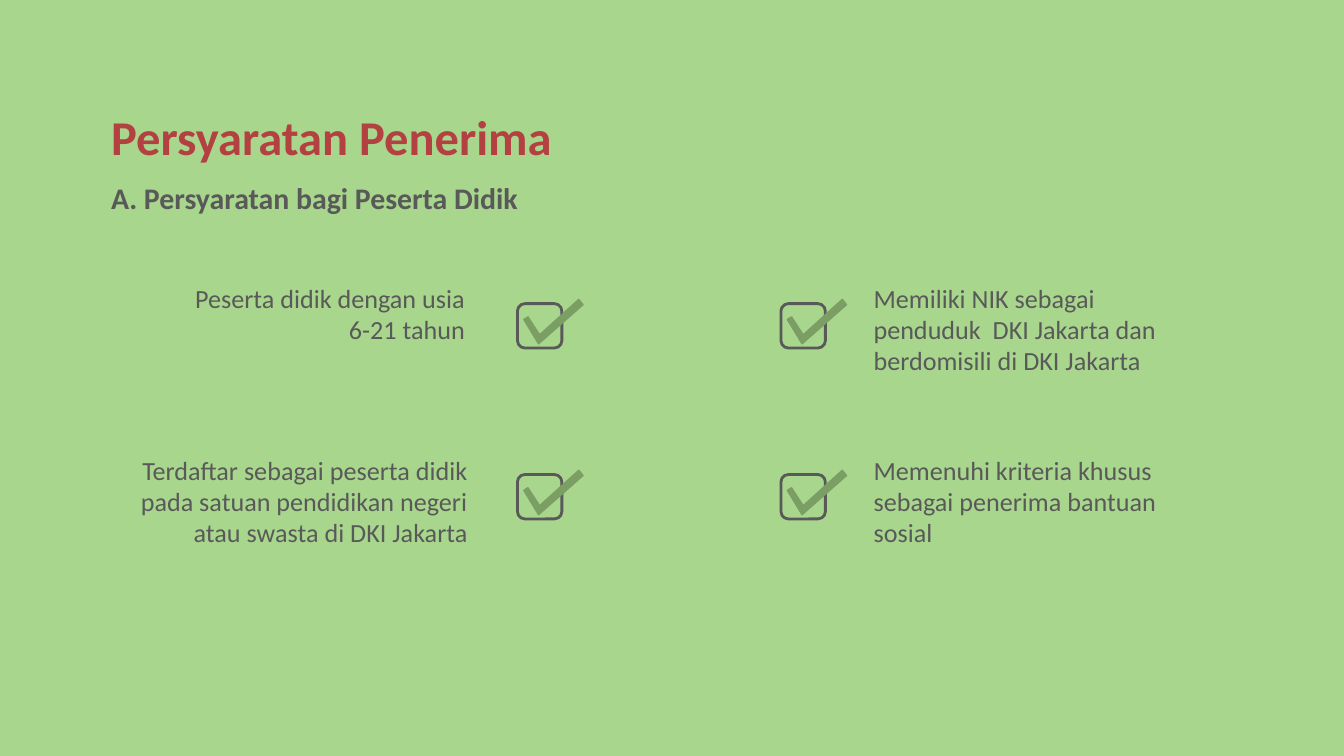
import dataclasses

import pptx
import pptx.dml.color
import pptx.enum.shapes
import pptx.enum.text
import pptx.util
from pptx.util import Cm

ALIGN = pptx.enum.text.PP_ALIGN


@dataclasses.dataclass(frozen=True)
class Theme:
    """Colours, font and type sizes of the slide."""
    background: str = "A8D68C"
    title: str = "B44141"
    ink: str = "595959"
    tick: str = "7A9E64"
    font: str = "Calibri"
    title_size: int = 26
    heading_size: int = 16
    body_size: int = 14


THEME = Theme()
COLUMNS = (9.78, 14.76)
ROWS = (5.74, 8.97)
TICK = ((1.04, 0), (0.3, 0.67), (0.08, 0.33), (0, 0.38), (0.28, 0.84), (1.12, 0.1))
REQUIREMENTS = (
    ("Peserta didik dengan usia 6-21 tahun", 3.2, 5.08, 5.84, 1.98, ALIGN.RIGHT),
    ("Memiliki NIK sebagai penduduk  DKI Jakarta dan berdomisili di DKI Jakarta",
     16.26, 5.08, 6.8, 2.26, ALIGN.LEFT),
    ("Terdaftar sebagai peserta didik pada satuan pendidikan negeri atau swasta di DKI Jakarta",
     2.24, 8.33, 6.85, 2.51, ALIGN.RIGHT),
    ("Memenuhi kriteria khusus\nsebagai penerima bantuan sosial",
     16.26, 8.33, 6.8, 1.98, ALIGN.LEFT),
)


def rgb(value):
    """Return the colour for a hex string."""
    return pptx.dml.color.RGBColor.from_string(value)


def add_text(s, text, x, y, w, h, *, size=THEME.body_size, color=THEME.ink,
             bold=False, align=ALIGN.LEFT, spacing=1.0):
    """Add a text box with one paragraph for each line of text."""
    tf = s.shapes.add_textbox(Cm(x), Cm(y), Cm(w), Cm(h)).text_frame
    tf.word_wrap = True
    tf.margin_left = tf.margin_right = tf.margin_top = tf.margin_bottom = Cm(0.25)
    for i, line in enumerate(text.split("\n")):
        p = tf.add_paragraph() if i else tf.paragraphs[0]
        p.alignment, p.line_spacing = align, spacing
        r = p.add_run()
        r.text = line
        r.font.name, r.font.size, r.font.bold = THEME.font, pptx.util.Pt(size), bold
        r.font.color.rgb = rgb(color)


def add_box(s, x, y):
    """Add an empty rounded checkbox."""
    shape_type = pptx.enum.shapes.MSO_SHAPE.ROUNDED_RECTANGLE
    sp = s.shapes.add_shape(shape_type, Cm(x), Cm(y), Cm(0.84), Cm(0.84))
    sp.shadow.inherit = False
    sp.fill.background()
    sp.line.color.rgb = rgb(THEME.ink)
    sp.line.width = pptx.util.Pt(1.5)


def add_tick(s, x, y):
    """Add a check mark with its top left corner at x, y."""
    points = [(Cm(x + dx), Cm(y + dy)) for dx, dy in TICK]
    builder = s.shapes.build_freeform(*points[0])
    builder.add_line_segments(points[1:], close=True)
    sp = builder.convert_to_shape()
    sp.shadow.inherit = False
    sp.fill.solid()
    sp.fill.fore_color.rgb = sp.line.color.rgb = rgb(THEME.tick)
    sp.line.width = pptx.util.Pt(0.75)


def main():
    """Build the slide and save it."""
    prs = pptx.Presentation()
    prs.slide_width, prs.slide_height = Cm(25.4), Cm(14.29)
    s = prs.slides.add_slide(prs.slide_layouts[6])
    s.background.fill.solid()
    s.background.fill.fore_color.rgb = rgb(THEME.background)
    add_text(s, "Persyaratan Penerima", 1.85, 1.98, 9.25, 1.35,
             size=THEME.title_size, color=THEME.title, bold=True, spacing=0.8)
    add_text(s, "A. Persyaratan bagi Peserta Didik", 1.85, 3.28, 9.25, 1.07,
             size=THEME.heading_size, bold=True, spacing=0.8)
    for y in ROWS:
        for x in COLUMNS:
            add_box(s, x, y)
            add_tick(s, x + 0.12, y - 0.08)
    for text, x, y, w, h, align in REQUIREMENTS:
        add_text(s, text, x, y, w, h, align=align)
    prs.save("out.pptx")


if __name__ == "__main__":
    main()
